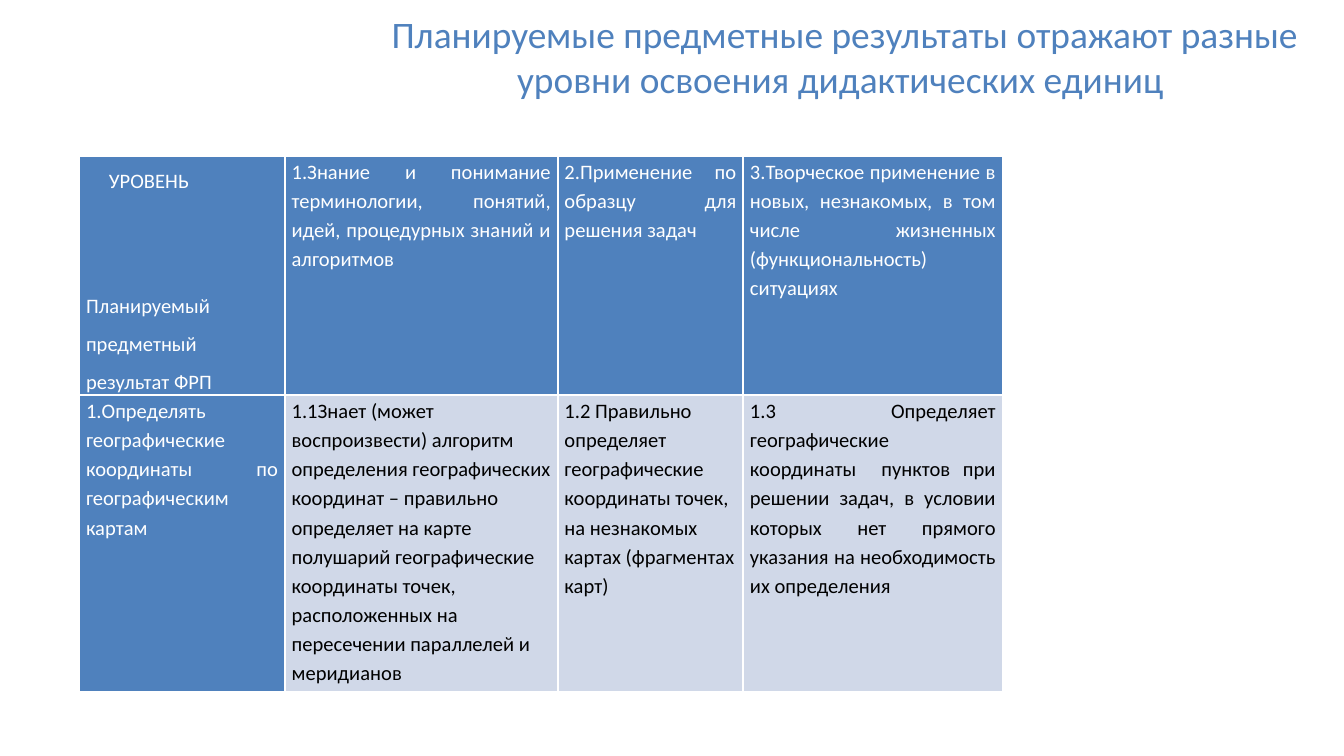
from pptx import Presentation
from pptx.dml.color import RGBColor
from pptx.enum.text import MSO_ANCHOR, MSO_AUTO_SIZE, PP_ALIGN
from pptx.util import Inches, Pt

BLUE, PALE, WHITE, BLACK = "4F81BD", "D0D8E8", "FFFFFF", "000000"
JUSTIFY, LEFT = PP_ALIGN.JUSTIFY, PP_ALIGN.LEFT

SLIDE_WIDTH = 10
SLIDE_HEIGHT = SLIDE_WIDTH * 9 / 16
COLUMN_WIDTHS = [1.53, 2.03, 1.38, 1.93]
ROW_HEIGHTS = [1.65, 2.21]

# Each cell is a fill, a text colour, an alignment and its paragraphs.
HEADER = [
    (BLUE, WHITE, JUSTIFY, [
        ("УРОВЕНЬ", {"line": 1.5, "indent": 0.17}),
        ("Планируемый", {"before": 51.5}),
        ("предметный результат ФРП ", {"line": 1.5}),
    ]),
    (BLUE, WHITE, JUSTIFY, [
        ("1.Знание и понимание терминологии, понятий, идей, "
         "процедурных знаний и алгоритмов", {}),
    ]),
    (BLUE, WHITE, JUSTIFY, [("2.Применение по образцу для решения задач", {})]),
    (BLUE, WHITE, JUSTIFY, [
        ("3.Творческое применение в новых, незнакомых, в том числе "
         "жизненных (функциональность) ситуациях", {}),
    ]),
]
COORDINATES = [
    (BLUE, WHITE, JUSTIFY, [
        ("1.Определять географические координаты по географическим картам", {}),
    ]),
    (PALE, BLACK, LEFT, [
        ("1.1Знает (может воспроизвести) алгоритм определения географических "
         "координат – правильно определяет на карте полушарий географические", {}),
        ("координаты точек,  расположенных на пересечении параллелей "
         "и меридианов", {}),
    ]),
    (PALE, BLACK, LEFT, [
        ("1.2 Правильно определяет географические координаты точек, "
         "на незнакомых картах (фрагментах карт)", {}),
    ]),
    (PALE, BLACK, JUSTIFY, [
        ("1.3 Определяет географические координаты  пунктов при решении задач, "
         "в условии которых нет прямого указания на необходимость "
         "их определения", {}),
    ]),
]


def rgb(color):
    return RGBColor.from_string(color)


class SlideBuilder:
    """Holds the deck style and the slide being filled."""

    font = "Calibri"
    title_size = 20
    cell_size = 11

    def __init__(self, deck):
        self.slide = deck.slides.add_slide(deck.slide_layouts[5])

    def add_run(self, paragraph, text, size, color):
        run = paragraph.add_run()
        run.text = text
        run.font.name = self.font
        run.font.size = Pt(size)
        run.font.bold = False
        run.font.color.rgb = rgb(color)

    def title(self, text, left, top, width, height):
        heading = self.slide.shapes.title
        heading.left, heading.top = Inches(left), Inches(top)
        heading.width, heading.height = Inches(width), Inches(height)
        frame = heading.text_frame
        frame.word_wrap = True
        frame.auto_size = MSO_AUTO_SIZE.NONE
        frame.vertical_anchor = MSO_ANCHOR.MIDDLE
        paragraph = frame.paragraphs[0]
        paragraph.alignment = PP_ALIGN.CENTER
        self.add_run(paragraph, text, self.title_size, BLUE)

    def table(self, rows, left, top, widths, heights):
        """Adds a table whose white rules come from the default table style."""
        grid = self.slide.shapes.add_table(
            len(rows), len(widths), Inches(left), Inches(top),
            Inches(sum(widths)), Inches(sum(heights))).table
        grid.first_row, grid.horz_banding = True, False
        for column, width in zip(grid.columns, widths):
            column.width = Inches(width)
        for row, height, contents in zip(grid.rows, heights, rows):
            row.height = Inches(height)
            for cell, content in zip(row.cells, contents):
                self.fill_cell(cell, *content)

    def fill_cell(self, cell, fill, color, alignment, paragraphs):
        cell.fill.solid()
        cell.fill.fore_color.rgb = rgb(fill)
        cell.margin_left = cell.margin_right = Inches(0.05)
        cell.margin_top = cell.margin_bottom = 0
        frame = cell.text_frame
        for index, (text, spacing) in enumerate(paragraphs):
            paragraph = frame.add_paragraph() if index else frame.paragraphs[0]
            paragraph.alignment = alignment
            paragraph.line_spacing = spacing.get("line", 1.15)
            if "before" in spacing:
                paragraph.space_before = Pt(spacing["before"])
            if "indent" in spacing:
                properties = paragraph._p.get_or_add_pPr()
                properties.set("marL", str(Inches(spacing["indent"])))
            self.add_run(paragraph, text, self.cell_size, color)


def main():
    deck = Presentation()
    deck.slide_width = Inches(SLIDE_WIDTH)
    deck.slide_height = Inches(SLIDE_HEIGHT)
    builder = SlideBuilder(deck)
    builder.title("Планируемые предметные результаты отражают разные "
                  "уровни освоения дидактических единиц ", 2.64, 0.14, 7.29, 0.56)
    builder.table([HEADER, COORDINATES], 0.59, 1.16, COLUMN_WIDTHS, ROW_HEIGHTS)
    deck.save("out.pptx")


if __name__ == "__main__":
    main()
